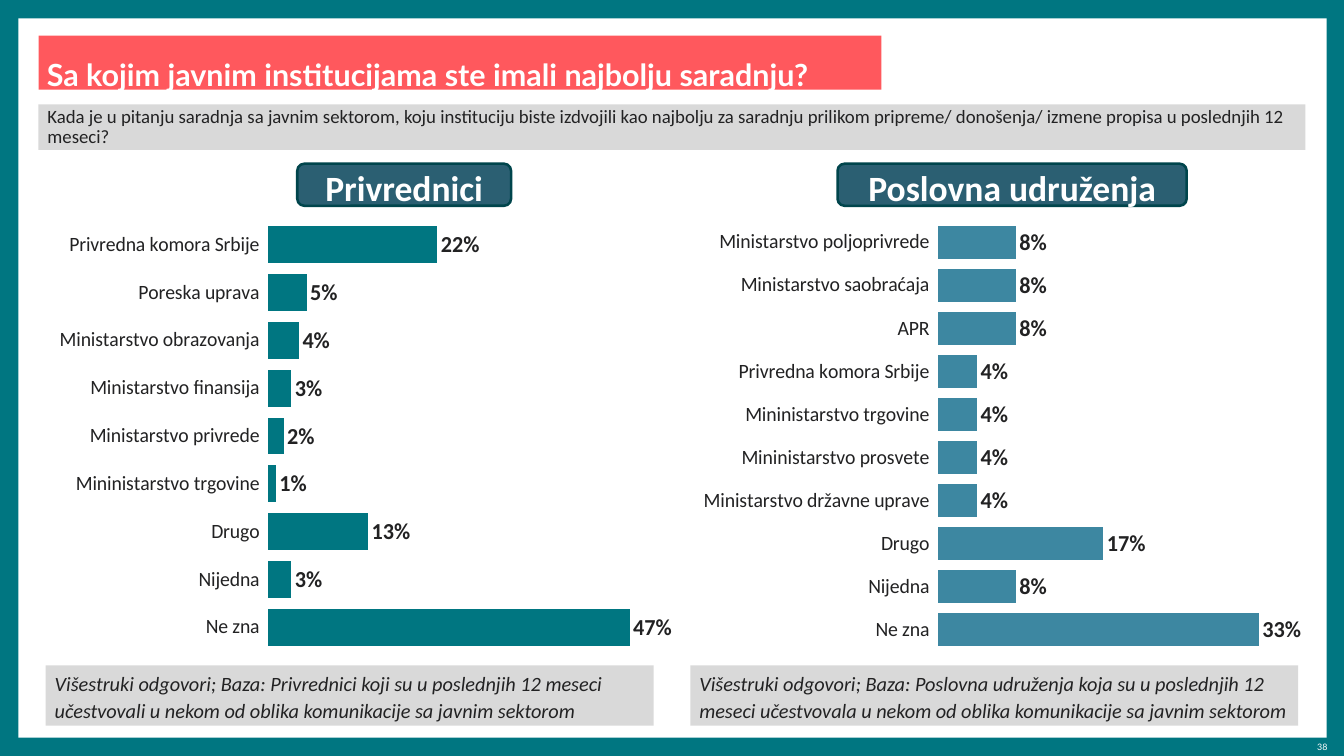
from pptx import Presentation
from pptx.chart.data import CategoryChartData
from pptx.dml.color import RGBColor
from pptx.enum.chart import XL_CHART_TYPE as CT, XL_LABEL_POSITION as LP, XL_TICK_MARK as TM
from pptx.enum.shapes import MSO_SHAPE as SHAPE
from pptx.enum.text import MSO_ANCHOR as ANCHOR, MSO_AUTO_SIZE as AUTO, PP_ALIGN as AL
from pptx.oxml import parse_xml
from pptx.oxml.ns import nsdecls
from pptx.util import Cm, Pt

TEAL = RGBColor(0x00, 0x76, 0x81)
BLUE = RGBColor(0x3D, 0x87, 0xA1)
CORAL = RGBColor(0xFF, 0x58, 0x5D)
SLATE = RGBColor(0x2B, 0x5F, 0x72)
DARK_TEAL = RGBColor(0x00, 0x45, 0x4C)
GREY = RGBColor(0xD9, 0xD9, 0xD9)
INK = RGBColor(0x22, 0x22, 0x23)
WHITE = RGBColor(0xFF, 0xFF, 0xFF)


def add_box(kind, x, y, w, h, fill):
    sp = s.shapes.add_shape(kind, Cm(x), Cm(y), Cm(w), Cm(h))
    sp.shadow.inherit = False
    sp.fill.solid()
    sp.fill.fore_color.rgb = fill
    sp.line.fill.background()
    return sp


def set_text(sp, text, size, color, font="Calibri", bold=False, italic=False,
             align=AL.LEFT, spacing=1.1, around=(0, 0), insets=(0.25, 0, 0.25, 0)):
    """Fill a shape with one paragraph; around is the space before and after in points."""
    tf = sp.text_frame
    tf.text = text
    tf.word_wrap = True
    tf.auto_size = AUTO.NONE
    tf.vertical_anchor = ANCHOR.MIDDLE
    tf.margin_left, tf.margin_top, tf.margin_right, tf.margin_bottom = map(Cm, insets)
    p = tf.paragraphs[0]
    p.alignment = align
    p.line_spacing = spacing
    p.space_before, p.space_after = map(Pt, around)
    p.font.name = font
    p.font.size = Pt(size)
    p.font.bold = bold
    p.font.italic = italic
    p.font.color.rgb = color


prs = Presentation()
prs.slide_width, prs.slide_height = Cm(37.34), Cm(21.01)
s = prs.slides.add_slide(prs.slide_layouts[5])
s.background.fill.solid()
s.background.fill.fore_color.rgb = TEAL

# Frame, title and question
add_box(SHAPE.RECTANGLE, 0.51, 0.51, 36.35, 19.99, WHITE)

page = s.shapes.add_textbox(Cm(34.87), Cm(20.57), Cm(2.01), Cm(0.33))
set_text(page, "38", 7, WHITE, font="Lato", align=AL.RIGHT, insets=(0, 0, 0, 0))

title = s.shapes.title
title.left, title.top, title.width, title.height = Cm(1.07), Cm(0.99), Cm(23.42), Cm(1.5)
title.fill.solid()
title.fill.fore_color.rgb = CORAL
set_text(title, "Sa kojim javnim institucijama ste imali najbolju saradnju?", 24, WHITE,
         font="Lato", bold=True, spacing=Pt(41), insets=(0.23, 0.2, 0.23, 0))
# The white frame must stay behind the title
s.shapes[-1].element.addnext(title.element)

question = add_box(SHAPE.RECTANGLE, 1.07, 2.9, 35.2, 1.27, GREY)
set_text(question, "Kada je u pitanju saradnja sa javnim sektorom, koju instituciju biste "
         "izdvojili kao najbolju za saradnju prilikom pripreme/ donošenja/ izmene propisa "
         "u poslednjih 12 meseci?", 14.8, INK, spacing=0.9, around=(6, 6))

# Each group: heading (text, x, width), chart (x, width), plot (x, width as shares),
# axis maximum, bar colour, note (x, text), values
groups = [
    (("Privrednici", 8.26, 5.94), (1.07, 17.6), (0.374, 0.626), 50, TEAL,
     (1.27, "Višestruki odgovori; Baza: Privrednici koji su u poslednjih 12 meseci "
            "učestvovali u nekom od oblika komunikacije sa javnim sektorom"),
     {"Privredna komora Srbije": 22, "Poreska uprava": 5, "Ministarstvo obrazovanja": 4,
      "Ministarstvo finansija": 3, "Ministarstvo privrede": 2,
      "Mininistarstvo trgovine": 1, "Drugo": 13, "Nijedna": 3, "Ne zna": 47}),
    (("Poslovna udruženja", 23.27, 9.7), (18.9, 17.25), (0.427, 0.563), 35, BLUE,
     (19.18, "Višestruki odgovori; Baza: Poslovna udruženja koja su u poslednjih 12 "
             "meseci učestvovala u nekom od oblika komunikacije sa javnim sektorom"),
     {"Ministarstvo poljoprivrede": 8, "Ministarstvo saobraćaja": 8, "APR": 8,
      "Privredna komora Srbije": 4, "Mininistarstvo trgovine": 4,
      "Mininistarstvo prosvete": 4, "Ministarstvo državne uprave": 4, "Drugo": 17,
      "Nijedna": 8, "Ne zna": 33}),
]

for heading, (x, w), (plot_x, plot_w), top_value, color, (note_x, note_text), answers in groups:
    data = CategoryChartData()
    data.categories = list(answers)
    data.add_series("Series 1", list(answers.values()))
    chart = s.shapes.add_chart(CT.BAR_CLUSTERED, Cm(x), Cm(6.1), Cm(w), Cm(12), data).chart
    chart.has_legend = False
    chart.has_title = False
    chart.font.name = "Calibri"
    chart.font.size = Pt(20)
    chart.font.color.rgb = INK

    cat_axis = chart.category_axis
    cat_axis.reverse_order = True
    cat_axis.major_tick_mark = TM.OUTSIDE
    cat_axis.format.line.fill.background()
    cat_axis.tick_labels.font.size = Pt(16)
    val_axis = chart.value_axis
    val_axis.visible = False
    val_axis.has_major_gridlines = False
    val_axis.minimum_scale = 0
    val_axis.maximum_scale = top_value

    plot = chart.plots[0]
    plot.gap_width = 30
    plot.vary_by_categories = False
    bars = plot.series[0]
    bars.format.fill.solid()
    bars.format.fill.fore_color.rgb = color
    labels = bars.data_labels
    labels.show_value = True
    labels.position = LP.OUTSIDE_END
    labels.number_format = '#"%"'
    labels.number_format_is_linked = False
    labels.font.size = Pt(18)
    labels.font.bold = True

    # Fixed inner plot area
    area = chart.element.chart.plotArea
    for old in area.findall("{*}layout"):
        area.remove(old)
    area.insert(0, parse_xml(
        f'<c:layout {nsdecls("c")}><c:manualLayout><c:layoutTarget val="inner"/>'
        '<c:xMode val="edge"/><c:yMode val="edge"/>'
        f'<c:x val="{plot_x}"/><c:y val="0.003"/><c:w val="{plot_w}"/><c:h val="0.997"/>'
        '</c:manualLayout></c:layout>'))

    name, head_x, head_w = heading
    head = add_box(SHAPE.ROUNDED_RECTANGLE, head_x, 4.55, head_w, 1.17, SLATE)
    head.line.color.rgb = DARK_TEAL
    head.line.width = Pt(2)
    set_text(head, name, 28, WHITE, bold=True, align=AL.CENTER, around=(24, 0),
             insets=(0.1, 0.1, 0.1, 0.1))

    note = add_box(SHAPE.RECTANGLE, note_x, 18.49, 16.89, 1.68, GREY)
    set_text(note, note_text, 16, INK, italic=True, around=(6, 6))

prs.save("out.pptx")
